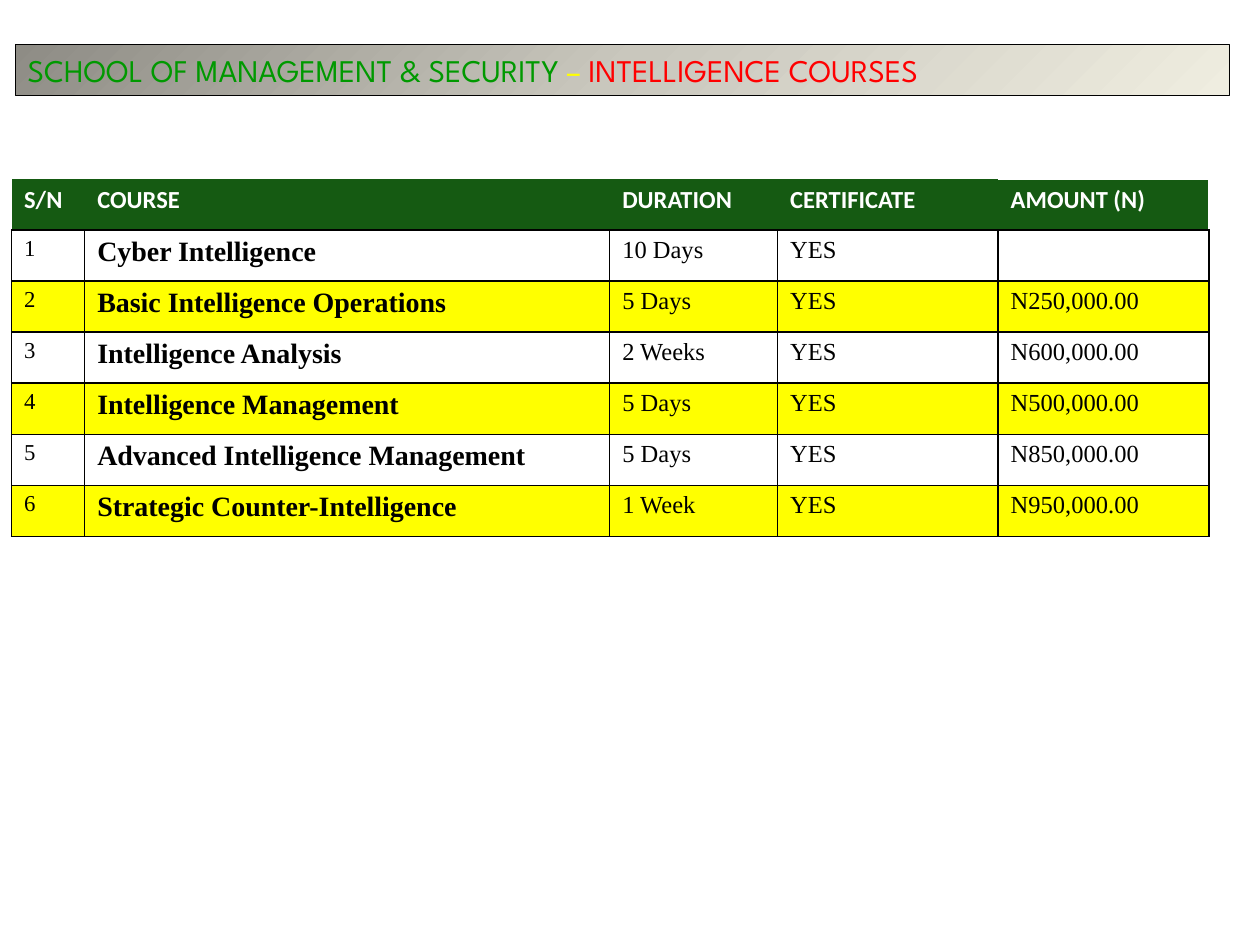
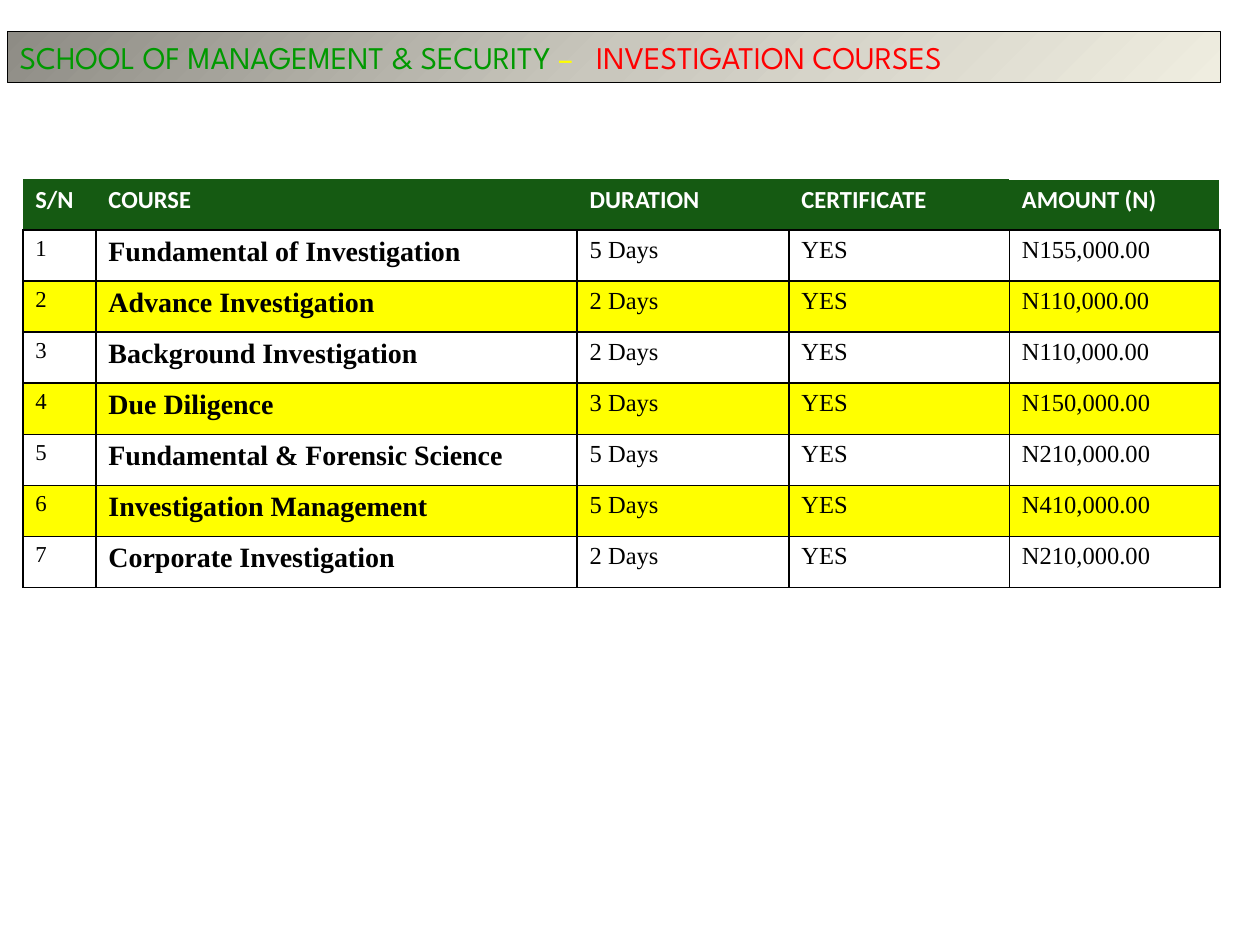
from copy import deepcopy

from lxml.etree import SubElement
from pptx import Presentation
from pptx.dml.color import RGBColor
from pptx.enum.shapes import MSO_SHAPE
from pptx.enum.text import MSO_ANCHOR, PP_ALIGN
from pptx.oxml.ns import qn
from pptx.util import Pt

COLORS = {
    "black": "000000",
    "white": "FFFFFF",
    "header": "155A12",
    "highlight": "FFFF00",
    "school": "009900",
    "dash": "FFFF00",
    "subject": "FF0000",
    "band_start": "8E8C85",
    "band_middle": "C9C7BD",
    "band_end": "EFEDE0",
}
TITLE_FONT = {"name": "League Spartan", "size": Pt(18), "bold": False}
HEADER_FONT = {"name": "Calibri", "size": Pt(14), "bold": True}
NUMBER_FONT = {"name": "Times New Roman", "size": Pt(13), "bold": False}
COURSE_FONT = {"name": "Times New Roman", "size": Pt(16), "bold": True}
DETAIL_FONT = {"name": "Times New Roman", "size": Pt(14), "bold": False}
ROW_FONTS = [NUMBER_FONT, COURSE_FONT] + [DETAIL_FONT] * 3

HEADINGS = ["S/N", "COURSE", "DURATION", "CERTIFICATE", "AMOUNT (N)"]
ROW_HEIGHT = 29.2
TABLE_TOP = 102.2
BAND_SIZE = (693.4, 29.2)
SIDES = ("L", "R", "T", "B")

PAGES = [
    {
        "subject": "INTELLIGENCE COURSES",
        "band_at": (8.8, 25.4),
        "dash_gap": 0,
        "table_left": 6.6,
        "widths": [41.8, 300, 96, 126, 120.4],
        "courses": [
            ("Cyber Intelligence", "10 Days", ""),
            ("Basic Intelligence Operations", "5 Days", "N250,000.00"),
            ("Intelligence Analysis", "2 Weeks", "N600,000.00"),
            ("Intelligence Management", "5 Days", "N500,000.00"),
            ("Advanced Intelligence Management", "5 Days", "N850,000.00"),
            ("Strategic Counter-Intelligence", "1 Week", "N950,000.00"),
        ],
    },
    {
        "subject": "INVESTIGATION COURSES",
        "band_at": (4.2, 18),
        "dash_gap": 9.1,
        "table_left": 13,
        "widths": [41.8, 275, 121, 126, 120.4],
        "courses": [
            ("Fundamental of Investigation", "5 Days", "N155,000.00"),
            ("Advance Investigation", "2 Days", "N110,000.00"),
            ("Background Investigation", "2 Days", "N110,000.00"),
            ("Due Diligence", "3 Days", "N150,000.00"),
            ("Fundamental & Forensic Science", "5 Days", "N210,000.00"),
            ("Investigation Management", "5 Days", "N410,000.00"),
            ("Corporate Investigation", "2 Days", "N210,000.00"),
        ],
    },
]


def color(name):
    return RGBColor.from_string(COLORS[name])


def add_run(paragraph, text, font_format, color_name):
    run = paragraph.add_run()
    run.text = text
    for attribute, value in font_format.items():
        setattr(run.font, attribute, value)
    run.font.color.rgb = color(color_name)
    return run


def fill_band(shape):
    shape.fill.gradient()
    shape.fill.gradient_angle = 315
    stop_list = shape._element.spPr.find(f".//{qn('a:gsLst')}")
    stop_list.insert(1, deepcopy(stop_list[0]))
    names = ("band_start", "band_middle", "band_end")
    for index, (stop, name) in enumerate(zip(shape.fill.gradient_stops, names)):
        stop.position = index / 2
        stop.color.rgb = color(name)


def add_title_band(slide, page):
    position = [Pt(value) for value in page["band_at"] + BAND_SIZE]
    shape = slide.shapes.add_shape(MSO_SHAPE.RECTANGLE, *position)
    shape.shadow.inherit = False
    fill_band(shape)
    shape.line.color.rgb = color("black")
    shape.line.width = Pt(0.25)
    shape.text_frame.word_wrap = True
    shape.text_frame.vertical_anchor = MSO_ANCHOR.TOP
    paragraph = shape.text_frame.paragraphs[0]
    paragraph.alignment = PP_ALIGN.LEFT
    add_run(paragraph, "SCHOOL OF MANAGEMENT & SECURITY ", TITLE_FONT, "school")
    add_run(paragraph, "–", TITLE_FONT, "dash")
    space = add_run(paragraph, " ", TITLE_FONT, "dash")
    space._r.get_or_add_rPr().set("spc", str(round(page["dash_gap"] * 100)))
    add_run(paragraph, page["subject"], TITLE_FONT, "subject")


def set_borders(cell, borders):
    properties = cell._tc.get_or_add_tcPr()
    for side in SIDES:
        line = SubElement(properties, qn(f"a:ln{side}"), w=str(Pt(1)))
        if side in borders:
            fill = SubElement(line, qn("a:solidFill"))
            SubElement(fill, qn("a:srgbClr"), val=COLORS[borders[side]])
        else:
            SubElement(line, qn("a:noFill"))


def set_cell(cell, text, font_format, text_color, fill_color, borders):
    set_borders(cell, borders)
    if fill_color:
        cell.fill.solid()
        cell.fill.fore_color.rgb = color(fill_color)
    else:
        cell.fill.background()
    if text:
        add_run(cell.text_frame.paragraphs[0], text, font_format, text_color)


def add_course_table(slide, page):
    row_count = len(page["courses"]) + 1
    table = slide.shapes.add_table(
        row_count, len(HEADINGS), Pt(page["table_left"]), Pt(TABLE_TOP),
        Pt(sum(page["widths"])), Pt(ROW_HEIGHT * row_count),
    ).table
    table.first_row = False
    table.horz_banding = False
    for column, width in zip(table.columns, page["widths"]):
        column.width = Pt(width)
    for row in table.rows:
        row.height = Pt(ROW_HEIGHT)

    for index, heading in enumerate(HEADINGS):
        borders = {"B": "black"}
        if index == len(HEADINGS) - 1:
            borders.update(T="white", R="white")
        set_cell(table.cell(0, index), heading, HEADER_FONT, "white", "header", borders)

    grid_borders = dict.fromkeys(SIDES, "black")
    for number, (course, duration, amount) in enumerate(page["courses"], 1):
        fill_color = None if number % 2 else "highlight"
        values = [str(number), course, duration, "YES", amount]
        for index, (text, font_format) in enumerate(zip(values, ROW_FONTS)):
            set_cell(table.cell(number, index), text, font_format, "black", fill_color, grid_borders)


def main():
    presentation = Presentation()
    presentation.slide_width = Pt(720)
    presentation.slide_height = Pt(540)
    for page in PAGES:
        slide = presentation.slides.add_slide(presentation.slide_layouts[6])
        add_title_band(slide, page)
        add_course_table(slide, page)
    presentation.save("out.pptx")


if __name__ == "__main__":
    main()
